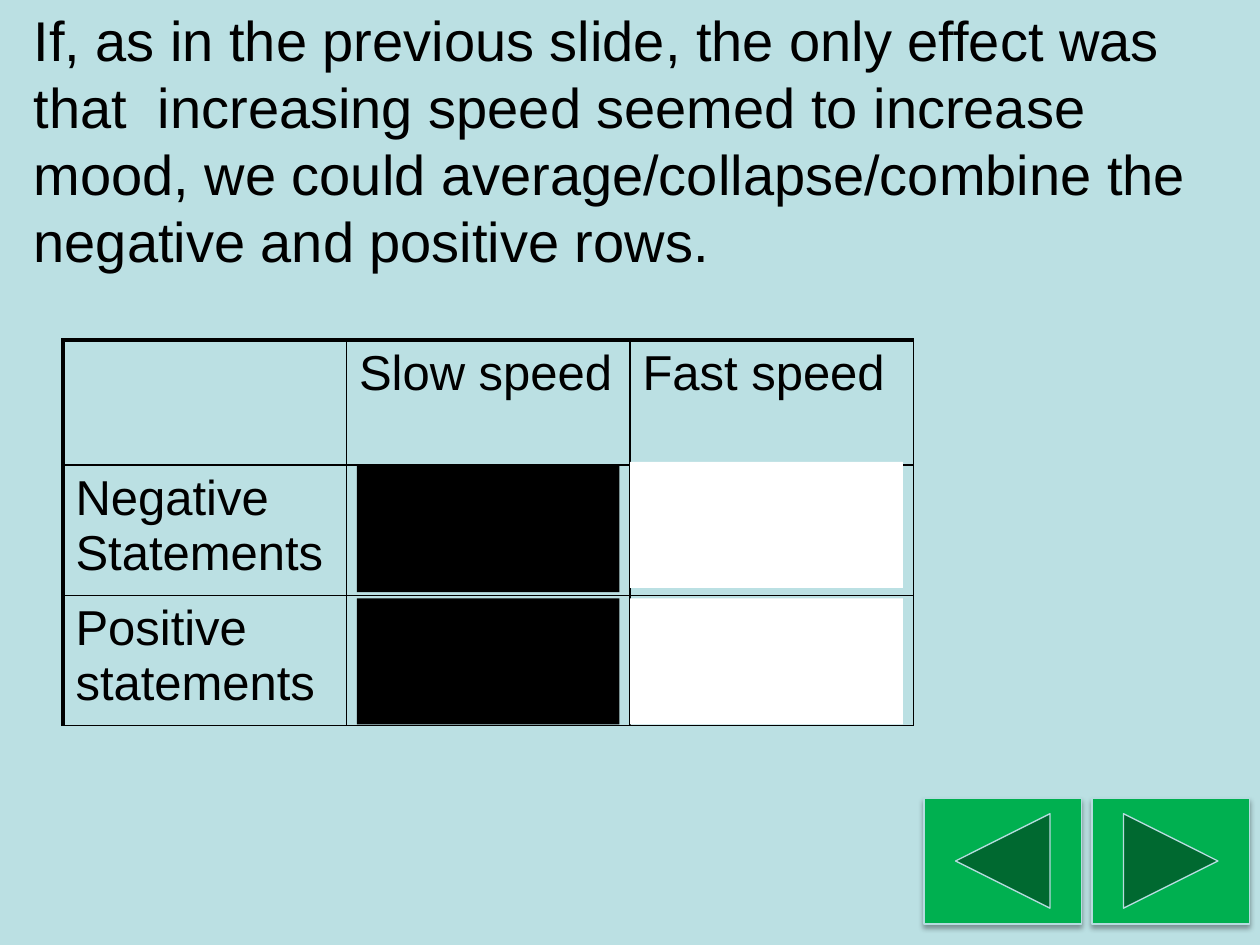
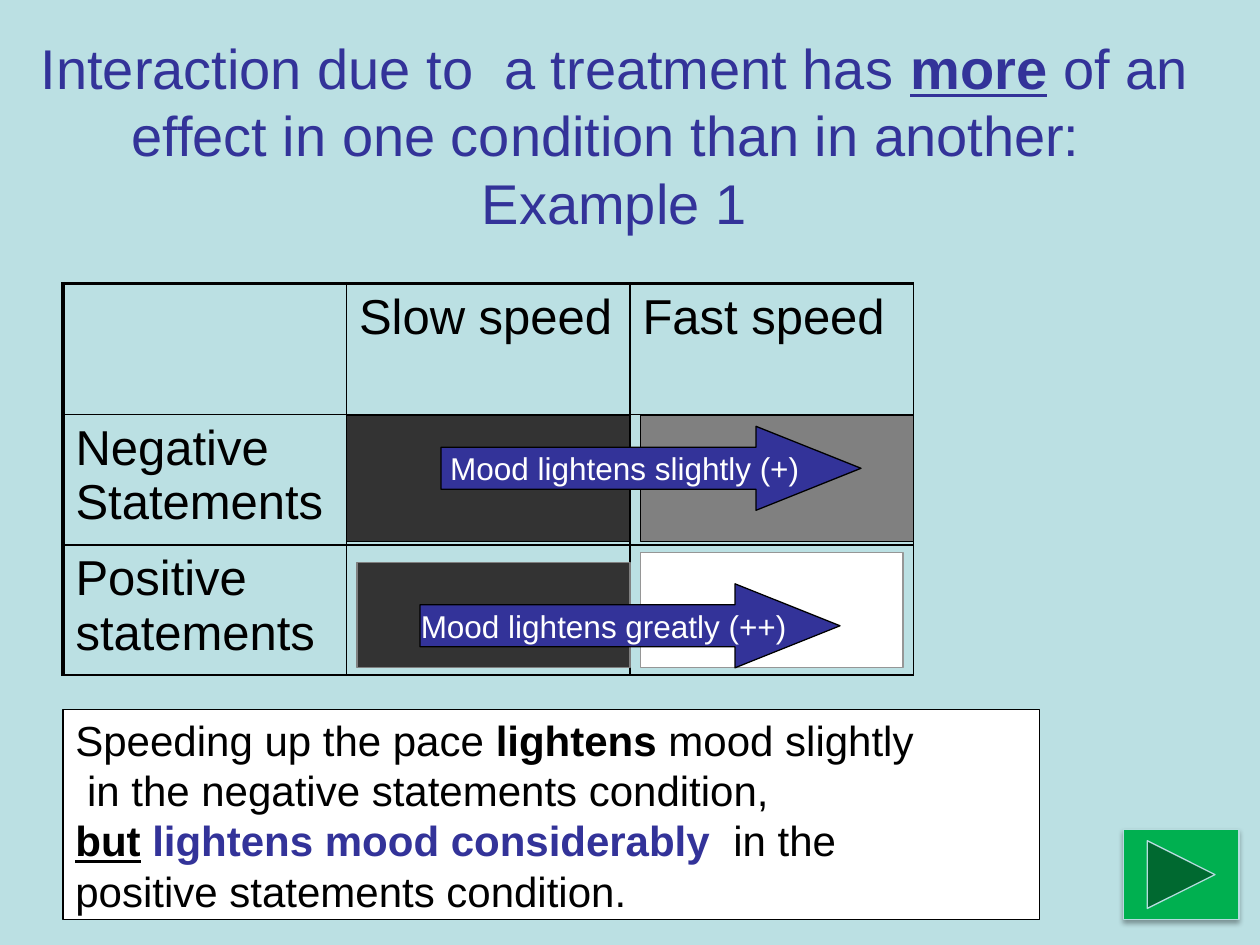
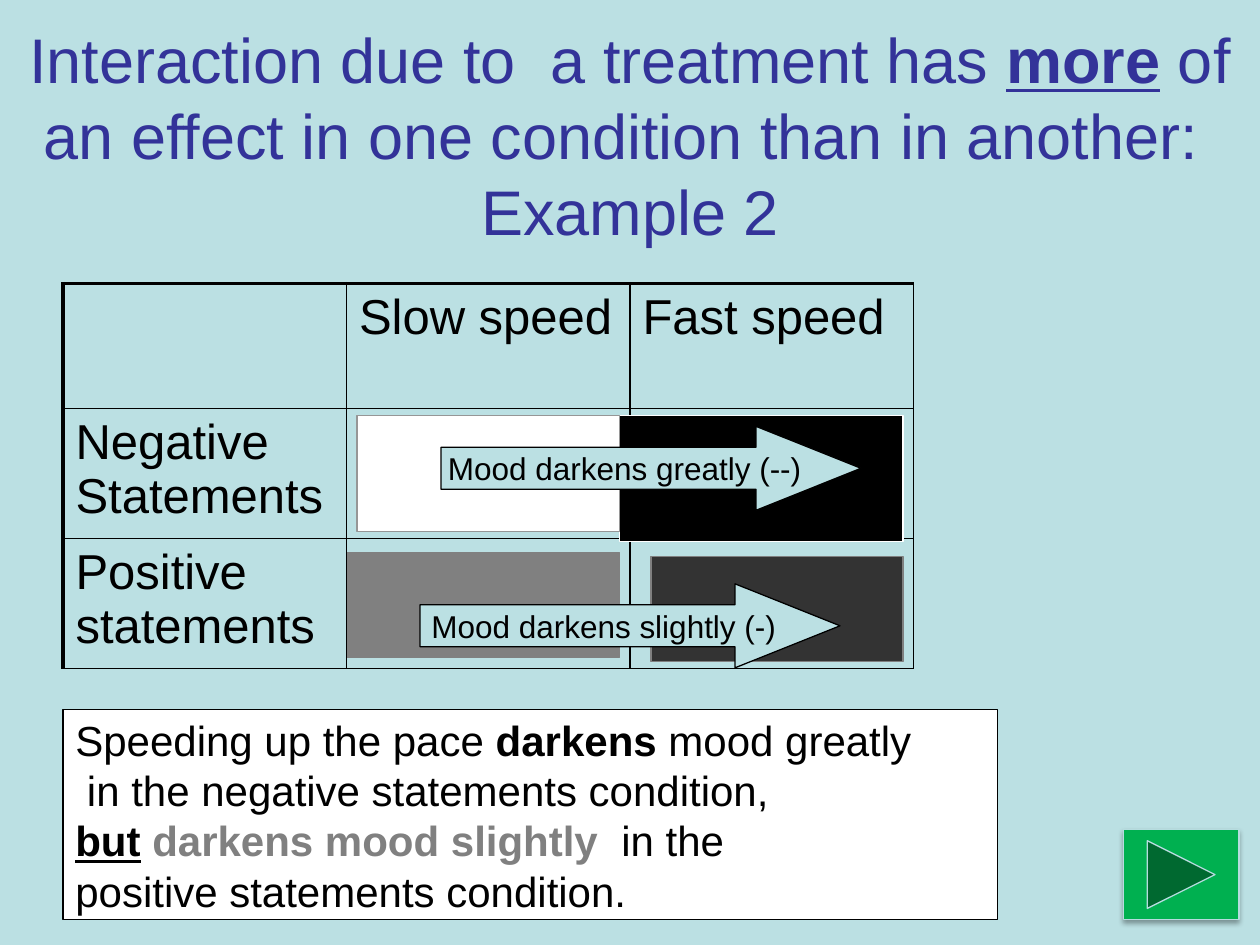
from dataclasses import dataclass

from lxml import etree
from pptx import Presentation
from pptx.dml.color import RGBColor
from pptx.enum.shapes import MSO_SHAPE
from pptx.enum.text import MSO_ANCHOR, MSO_AUTO_SIZE, PP_ALIGN
from pptx.oxml.ns import qn
from pptx.util import Inches, Pt

RECT = MSO_SHAPE.RECTANGLE
ARROW = MSO_SHAPE.RIGHT_ARROW
FORWARD = MSO_SHAPE.ACTION_BUTTON_FORWARD_OR_NEXT
BACK = MSO_SHAPE.ACTION_BUTTON_BACK_OR_PREVIOUS
LEFT, CENTER = PP_ALIGN.LEFT, PP_ALIGN.CENTER
MIDDLE = MSO_ANCHOR.MIDDLE
NO_FIT = MSO_AUTO_SIZE.NONE
TITLE_ONLY = 5
WIDTH, HEIGHT = Inches(10), Inches(7.5)
COLUMNS, ROWS = 120, 90


@dataclass(frozen=True)
class Theme:
    """Colours, font and point sizes shared by all slides."""
    font: str = "Arial"
    sky: str = "BBE0E3"
    black: str = "000000"
    white: str = "FFFFFF"
    indigo: str = "333399"
    charcoal: str = "333333"
    gray: str = "808080"
    silver: str = "969696"
    green: str = "00B050"
    button_edge: str = "B6DCDF"
    title: int = 32
    large_title: int = 36
    table: int = 28
    caption: int = 24
    label: int = 18
    thin: float = 0.75
    rule: float = 1
    thick: float = 2.25


THEME = Theme()
BOLD = {"bold": True}
STRESS = {"bold": True, "underline": True}


def place(left, top, width, height):
    """Turn grid columns and rows into slide lengths."""
    return (int(WIDTH * left / COLUMNS), int(HEIGHT * top / ROWS),
            int(WIDTH * width / COLUMNS), int(HEIGHT * height / ROWS))


def add_span(para, text, size, color, formats=None):
    """Add formatted text, breaking the line at each newline."""
    for index, line in enumerate(text.split("\n")):
        if index:
            para.add_line_break()
        span = para.add_run()
        span.text = line
        values = {"name": THEME.font, "size": Pt(size), **(formats or {})}
        for name, value in values.items():
            setattr(span.font, name, value)
        span.font.color.rgb = RGBColor.from_string(color)


def write(frame, lines, size, color, align=LEFT, wrap=True):
    """Fill a text frame with paragraphs given as lists of spans."""
    values = {"word_wrap": wrap, "vertical_anchor": MIDDLE, "auto_size": NO_FIT}
    for name, value in values.items():
        setattr(frame, name, value)
    for index, spans in enumerate(lines):
        para = frame.add_paragraph() if index else frame.paragraphs[0]
        para.alignment = align
        for text, formats, *own_color in spans:
            add_span(para, text, size, own_color[0] if own_color else color, formats)


def add_page(deck, spans, area, size, color, align):
    """Add a slide with its title."""
    page = deck.slides.add_slide(deck.slide_layouts[TITLE_ONLY])
    title = page.shapes.title
    title.left, title.top, title.width, title.height = place(*area)
    write(title.text_frame, [spans], size, color, align)
    return page


def add_figure(page, kind, area, fill, edge=None):
    """Add a flat preset shape."""
    figure = page.shapes.add_shape(kind, *place(*area))
    figure.shadow.inherit = False
    figure.fill.solid()
    figure.fill.fore_color.rgb = RGBColor.from_string(fill)
    if edge:
        figure.line.color.rgb = RGBColor.from_string(edge)
        figure.line.width = Pt(THEME.thin)
    else:
        figure.line.fill.background()
    return figure


def add_button(page, kind, area):
    """Add a navigation button with a soft shadow."""
    button = add_figure(page, kind, area, THEME.green, THEME.button_edge)
    effects = button.element.spPr.find(qn("a:effectLst"))
    shadow = etree.SubElement(effects, qn("a:outerShdw"), blurRad=str(Pt(3.1)),
                              dist=str(Pt(1.8)), dir="5400000", rotWithShape="0")
    color = etree.SubElement(shadow, qn("a:srgbClr"), val=THEME.black)
    etree.SubElement(color, qn("a:alpha"), val="35000")


def add_arrow(page, left, top, text, fill, color):
    """Add a labelled mood arrow."""
    arrow = add_figure(page, ARROW, (left, top, 40, 8), fill, THEME.black)
    arrow.adjustments[0], arrow.adjustments[1] = 0.5, 1.25
    write(arrow.text_frame, [[(text, None)]], THEME.label, color, CENTER, wrap=False)


def set_borders(cell, widths):
    """Draw the cell's left, right, top and bottom borders."""
    properties = cell._tc.get_or_add_tcPr()
    for index, (side, width) in enumerate(zip("LRTB", widths)):
        line = etree.Element(qn(f"a:ln{side}"), w=str(Pt(width)))
        fill = etree.SubElement(line, qn("a:solidFill"))
        etree.SubElement(fill, qn("a:srgbClr"), val=THEME.black)
        properties.insert(index, line)


def add_conditions(page, top, header):
    """Add the table of speed by kind of statement."""
    words = (("", "Slow speed", "Fast speed"),
             ("Negative Statements", "", ""),
             ("Positive statements", "", ""))
    heights = (header, 12.4, 12.4)
    table = page.shapes.add_table(3, 3, *place(6, top, 81, sum(heights))).table
    table.first_row = table.horz_banding = False
    for row, height in enumerate(heights):
        table.rows[row].height = int(HEIGHT * height / ROWS)
        for column, text in enumerate(words[row]):
            cell = table.cell(row, column)
            cell.fill.background()
            set_borders(cell, (THEME.rule if column else THEME.thick, THEME.rule,
                               THEME.rule if row else THEME.thick, THEME.rule))
            if text:
                add_span(cell.text_frame.paragraphs[0], text, THEME.table, THEME.black)


def add_caption(page, width, verb, first, second, accent):
    """Add the boxed explanation of the interaction."""
    box = add_figure(page, RECT, (6, 67.6, width, 20), THEME.white, THEME.black)
    lines = [[("Speeding up the pace ", None), (f"{verb} ", BOLD), (f"mood {first}", None)],
             [(" in the negative statements condition,", None)],
             [("but", STRESS), (" ", None), (f"{verb} mood {second} ", BOLD, accent),
              (" in the", None)],
             [("positive statements condition.", None)]]
    write(box.text_frame, lines, THEME.caption, THEME.black)


def add_example(deck, number, width, size):
    """Add a slide titled as an interaction example."""
    spans = [("Interaction due to  a treatment has ", None), ("more", STRESS),
             (f" of an effect in one condition than in another: \nExample {number}", None)]
    page = add_page(deck, spans, (0, 0, width, 25.6), size, THEME.indigo, CENTER)
    add_button(page, FORWARD, (107, 79, 11, 8.6))
    return page


def build_averages(deck):
    """Build the slide on combining rows."""
    text = ("If, as in the previous slide, the only effect was that  increasing speed "
            "seemed to increase mood, we could average/collapse/combine the negative "
            "and positive rows.")
    page = add_page(deck, [(text, None)], (2, 9.4, 118, 15), THEME.title, THEME.black, LEFT)
    page.shapes.title.text_frame.margin_bottom = Inches(0.65)
    add_conditions(page, 32.4, 11.9)
    for left, top, width, fill in ((34, 44.4, 25, THEME.black), (60, 57, 26, THEME.white),
                                   (34, 57, 25, THEME.black), (60, 44, 26, THEME.white)):
        add_figure(page, RECT, (left, top, width, 12), fill)
    for kind, left in ((FORWARD, 104), (BACK, 88)):
        add_button(page, kind, (left, 76, 15, 12))


def build_lightening(deck):
    """Build the example in which speed lightens mood."""
    page = add_example(deck, 1, 117, THEME.title)
    add_conditions(page, 27, 12.5)
    add_caption(page, 93, "lightens", "slightly", "considerably", THEME.indigo)
    for area, fill, edge in (((61, 39.6, 26, 12), THEME.gray, THEME.black),
                             ((33, 39.6, 27, 12), THEME.charcoal, THEME.black),
                             ((61, 52.6, 25, 11), THEME.white, THEME.silver),
                             ((34, 53.6, 26, 10), THEME.charcoal, THEME.gray)):
        add_figure(page, RECT, area, fill, edge)
    add_arrow(page, 40, 55.6, "Mood lightens greatly (++)", THEME.indigo, THEME.white)
    add_arrow(page, 42, 40.6, "Mood lightens slightly (+)", THEME.indigo, THEME.white)


def build_darkening(deck):
    """Build the example in which speed darkens mood."""
    page = add_example(deck, 2, 120, THEME.large_title)
    add_figure(page, RECT, (33, 52.6, 26, 10), THEME.gray, THEME.gray)
    add_conditions(page, 27, 11.9)
    add_caption(page, 89, "darkens", "greatly", "slightly", THEME.gray)
    for area, fill, edge in (((59, 39.6, 27, 12), THEME.black, THEME.white),
                             ((34, 39.6, 25, 11), THEME.white, THEME.silver),
                             ((62, 53, 24, 10), THEME.charcoal, THEME.gray)):
        add_figure(page, RECT, area, fill, edge)
    add_arrow(page, 40, 55.6, "Mood darkens slightly (-)", THEME.sky, THEME.black)
    add_arrow(page, 42, 40.6, "Mood darkens greatly (--)", THEME.sky, THEME.black)


def main():
    """Build and save the deck."""
    deck = Presentation()
    deck.slide_width, deck.slide_height = WIDTH, HEIGHT
    backdrop = deck.slide_master.background.fill
    backdrop.solid()
    backdrop.fore_color.rgb = RGBColor.from_string(THEME.sky)
    for build in (build_averages, build_lightening, build_darkening):
        build(deck)
    deck.save("out.pptx")


if __name__ == "__main__":
    main()
